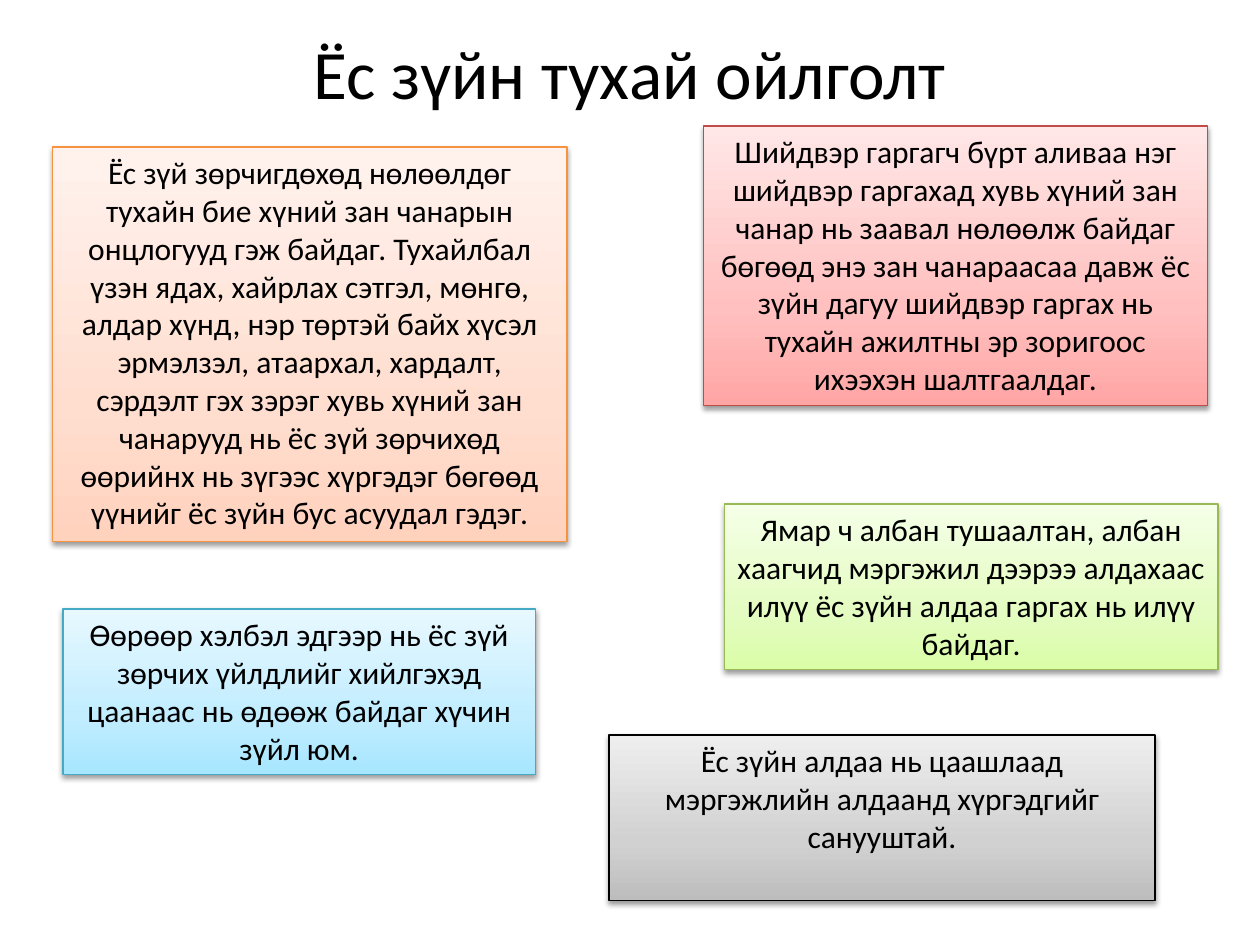
from copy import deepcopy

from lxml.etree import SubElement
from pptx import Presentation
from pptx.dml.color import RGBColor
from pptx.enum.shapes import MSO_SHAPE
from pptx.enum.text import MSO_ANCHOR, MSO_AUTO_SIZE, PP_ALIGN
from pptx.oxml.ns import qn
from pptx.util import Inches, Pt

BLACK = RGBColor(0x00, 0x00, 0x00)
ORANGE_LINE = RGBColor(0xF6, 0x92, 0x40)
ORANGE = (RGBColor(0xFF, 0xD2, 0xBD), RGBColor(0xFF, 0xDE, 0xD0), RGBColor(0xFF, 0xF2, 0xED))
BLUE_LINE = RGBColor(0x46, 0xAA, 0xC5)
BLUE = (RGBColor(0xA7, 0xE6, 0xFF), RGBColor(0xC1, 0xED, 0xFF), RGBColor(0xE7, 0xF8, 0xFF))
RED_LINE = RGBColor(0xBF, 0x4C, 0x48)
RED = (RGBColor(0xFF, 0xA6, 0xA5), RGBColor(0xFF, 0xC0, 0xBF), RGBColor(0xFF, 0xE7, 0xE7))
GREEN_LINE = RGBColor(0x98, 0xB9, 0x55)
GREEN = (RGBColor(0xDA, 0xFD, 0xA7), RGBColor(0xE4, 0xFC, 0xC2), RGBColor(0xF5, 0xFF, 0xE7))
GREY = (RGBColor(0xBD, 0xBD, 0xBD), RGBColor(0xD1, 0xD1, 0xD1), RGBColor(0xEE, 0xEE, 0xEE))

COLUMNS, ROWS = 120, 90
STOP_POSITIONS = (0, 0.35, 1)

NOTES = [
    ((5, 14, 49, 37.6), ORANGE, ORANGE_LINE,
     "Ёс зүй зөрчигдөхөд нөлөөлдөг тухайн бие хүний зан чанарын онцлогууд гэж байдаг. "
     "Тухайлбал үзэн ядах, хайрлах сэтгэл, мөнгө, алдар хүнд, нэр төртэй байх хүсэл "
     "эрмэлзэл, атаархал, хардалт, сэрдэлт гэх зэрэг хувь хүний зан чанарууд нь ёс зүй "
     "зөрчихөд өөрийнх нь зүгээс хүргэдэг бөгөөд үүнийг ёс зүйн бус асуудал гэдэг."),
    ((6, 58, 45, 15.75), BLUE, BLUE_LINE,
     "Өөрөөр хэлбэл эдгээр нь ёс зүй зөрчих үйлдлийг хийлгэхэд цаанаас нь өдөөж "
     "байдаг хүчин зүйл юм."),
    ((67, 12, 48, 26.65), RED, RED_LINE,
     "Шийдвэр гаргагч бүрт аливаа нэг шийдвэр гаргахад хувь хүний зан чанар нь заавал "
     "нөлөөлж байдаг бөгөөд энэ зан чанараасаа давж ёс зүйн дагуу шийдвэр гаргах нь "
     "тухайн ажилтны эр зоригоос ихээхэн шалтгаалдаг."),
    ((69, 48, 47, 15.75), GREEN, GREEN_LINE,
     "Ямар ч албан тушаалтан, албан хаагчид мэргэжил дээрээ алдахаас илүү ёс зүйн "
     "алдаа гаргах нь илүү байдаг."),
    ((58, 70, 52, 15.75), GREY, BLACK,
     "Ёс зүйн алдаа нь цаашлаад мэргэжлийн алдаанд хүргэдгийг санууштай."),
]


def write_text(frame, text, *, size, anchor, auto_size, font="Calibri", color=BLACK):
    """Write one centred paragraph into a text frame."""
    frame.word_wrap = True
    frame.auto_size = auto_size
    frame.vertical_anchor = anchor
    paragraph = frame.paragraphs[0]
    paragraph.alignment = PP_ALIGN.CENTER
    span = paragraph.add_run()
    span.text = text
    span.font.name = font
    span.font.size = Pt(size)
    span.font.color.rgb = color


class Page:
    """Hold the style and the current slide, placing elements on its grid."""

    def __init__(self, deck):
        """Add a title-only slide to the deck."""
        self.slide = deck.slides.add_slide(deck.slide_layouts[5])
        self.column = deck.slide_width / COLUMNS
        self.row = deck.slide_height / ROWS
        self.title_size, self.note_size = 39.6, 18

    def place(self, left, top, width, height):
        """Turn columns and rows into slide lengths."""
        return (round(left * self.column), round(top * self.row),
                round(width * self.column), round(height * self.row))

    def title(self, area, text):
        """Move and fill the title placeholder."""
        box = self.slide.shapes.title
        box.left, box.top, box.width, box.height = self.place(*area)
        write_text(box.text_frame, text, size=self.title_size,
                   anchor=MSO_ANCHOR.MIDDLE, auto_size=MSO_AUTO_SIZE.NONE)

    def note(self, area, colors, line_color, text):
        """Add a shaded rectangle with text."""
        box = self.slide.shapes.add_shape(MSO_SHAPE.RECTANGLE, *self.place(*area))
        self.shade(box, colors)
        box.line.color.rgb = line_color
        box.line.width = Pt(0.75)
        self.drop_shadow(box)
        write_text(box.text_frame, text, size=self.note_size,
                   anchor=MSO_ANCHOR.TOP, auto_size=MSO_AUTO_SIZE.SHAPE_TO_FIT_TEXT)

    def shade(self, box, colors):
        """Fill a box with a three-stop gradient that rises from its bottom edge."""
        box.fill.gradient()
        box.fill.gradient_angle = 90
        stop_list = box.element.spPr.find(qn("a:gradFill")).find(qn("a:gsLst"))
        stop_list.insert(1, deepcopy(stop_list[0]))
        for stop, position, color in zip(box.fill.gradient_stops, STOP_POSITIONS, colors):
            stop.position = position
            stop.color.rgb = color

    def drop_shadow(self, box):
        """Give a box a soft shadow below it."""
        box.shadow.inherit = False
        effects = box.element.spPr.find(qn("a:effectLst"))
        shadow = SubElement(effects, qn("a:outerShdw"), blurRad=str(Pt(3.1)),
                            dist=str(Pt(1.6)), dir="5400000", rotWithShape="0")
        color = SubElement(shadow, qn("a:srgbClr"), val=str(BLACK))
        SubElement(color, qn("a:alpha"), val="38000")


def main():
    """Build the slide and save the deck."""
    deck = Presentation()
    deck.slide_width, deck.slide_height = Inches(10), Inches(7.5)
    page = Page(deck)
    page.title((6, 3.6, 108, 6.4), "Ёс зүйн тухай ойлголт")
    for note in NOTES:
        page.note(*note)
    deck.save("out.pptx")


if __name__ == "__main__":
    main()
